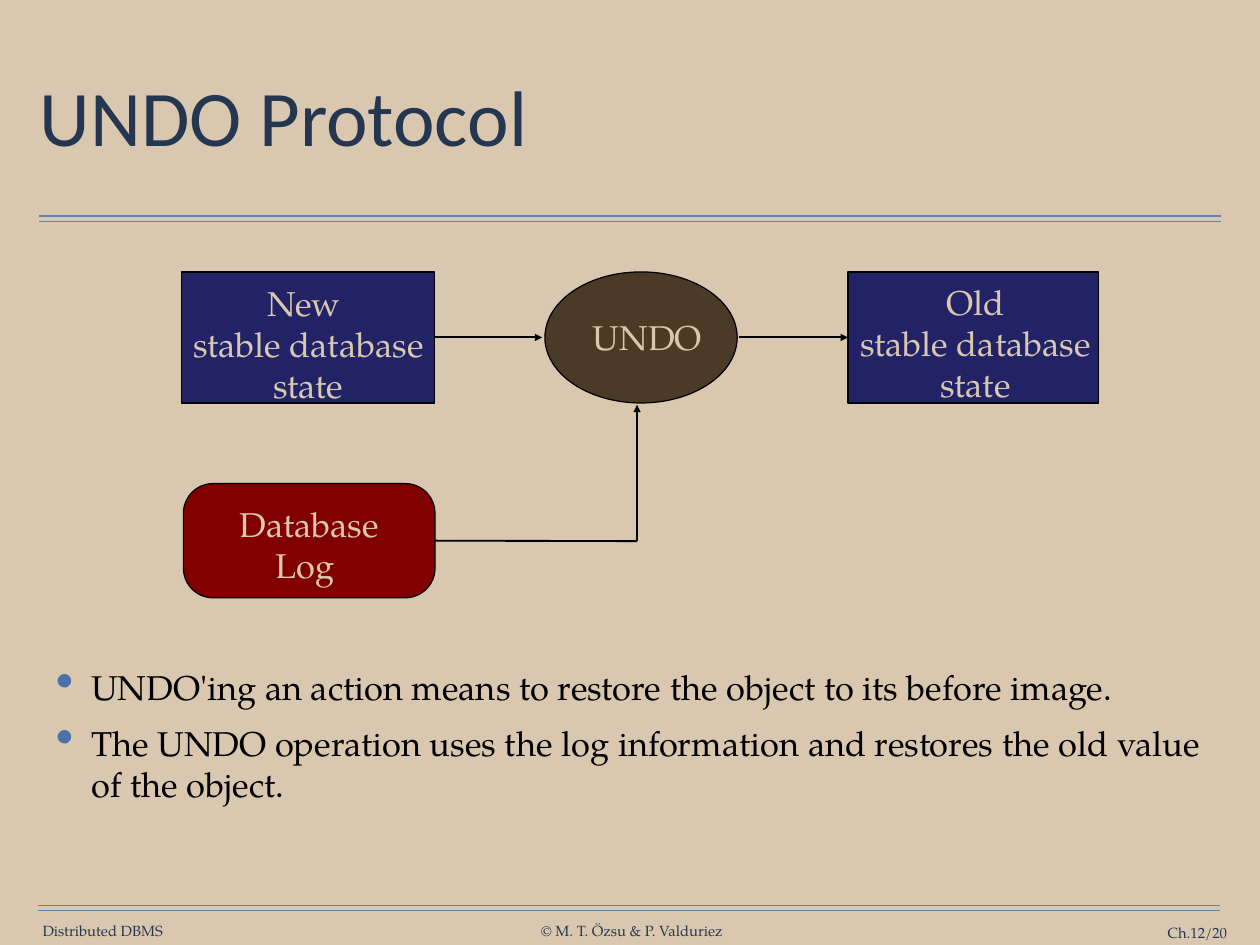
from pptx import Presentation
from pptx.util import Inches, Pt
from pptx.dml.color import RGBColor as Rgb
from pptx.enum.shapes import MSO_SHAPE as Kind, MSO_CONNECTOR as Conn
from pptx.enum.text import PP_ALIGN as Align, MSO_ANCHOR as Anchor, MSO_AUTO_SIZE as Fit
from pptx.oxml.ns import qn
from lxml.etree import SubElement as Sub

HUES = {
    "sand": "D9C8AF", "rule": "6682AA", "slate": "263750", "title": "253750",
    "dot": "4A71A9", "navy": "222267", "red": "800000", "brown": "4A3A26",
    "black": "000000",
}
SERIF = "TeX Gyre Pagella"
SANS = "Calibri"


def hue(name):
    return Rgb.from_string(HUES[name])


class Board:
    def __init__(self, deck):
        self.slide = deck.slides.add_slide(deck.slide_layouts[6])
        self.shapes = self.slide.shapes
        back = self.slide.background.fill
        back.solid()
        back.fore_color.rgb = hue("sand")

    def text(self, rect, lines, size, color, font=SERIF, align=Align.CENTER,
             pad=(0, 0), anchor=Anchor.TOP, wrap=False, space=1.0, gap=0, dots=False):
        frame = self.shapes.add_textbox(*map(Inches, rect)).text_frame
        frame.margin_left = frame.margin_right = Inches(pad[0])
        frame.margin_top = frame.margin_bottom = Inches(pad[1])
        frame.word_wrap = wrap
        frame.auto_size = Fit.NONE if wrap else Fit.SHAPE_TO_FIT_TEXT
        frame.vertical_anchor = anchor
        for num, line in enumerate(lines):
            para = frame.add_paragraph() if num else frame.paragraphs[0]
            para.text = line
            para.alignment = align
            para.line_spacing = space
            if num and gap:
                para.space_before = Pt(gap)
            if dots:
                self.dot(para)
            para.font.size = Pt(size)
            para.font.name = font
            para.font.color.rgb = hue(color)

    def dot(self, para):
        props = para._p.get_or_add_pPr()
        props.set("marL", str(Inches(0.4)))
        props.set("indent", str(-Inches(0.4)))
        Sub(Sub(props, qn("a:buClr")), qn("a:srgbClr"), val=HUES["dot"])
        Sub(props, qn("a:buSzPct"), val="150000")
        Sub(props, qn("a:buChar"), char="•")

    def node(self, kind, rect, color, label, lines):
        shape = self.shapes.add_shape(kind, *map(Inches, rect))
        shape.shadow.inherit = False
        shape.fill.solid()
        shape.fill.fore_color.rgb = hue(color)
        shape.line.color.rgb = hue("black")
        shape.line.width = Pt(1)
        self.text(label, lines, 28, "sand", pad=(0.14, 0.07))
        return shape

    def line(self, start, end, color="black", width=1.5, head=False, source=None, target=None):
        line = self.shapes.add_connector(Conn.STRAIGHT, *map(Inches, start + end))
        line.line.color.rgb = hue(color)
        line.line.width = Pt(width)
        if head:
            Sub(line.line._get_or_add_ln(), qn("a:tailEnd"), type="triangle")
        Sub(line._element.spPr, qn("a:effectLst"))
        if source:
            line.begin_connect(source, 3)
        if target:
            line.end_connect(target, 1)


def main():
    deck = Presentation()
    deck.slide_width = Inches(14.22)
    deck.slide_height = Inches(10.67)
    board = Board(deck)

    for left, top in ((0.44, 2.44), (0.43, 10.22)):
        for y in (top, top + 0.06):
            board.line((left, y), (left + 13.34, y), "rule", 1)

    for rect, words, align, wrap in (
        ((0.47, 10.41, 1.38, 0.2), "Distributed DBMS", Align.CENTER, False),
        ((6.09, 10.41, 2.08, 0.2), "© M. T. Özsu & P. Valduriez", Align.CENTER, False),
        ((12.31, 10.43, 1.54, 0.2), "Ch.12/20", Align.RIGHT, True),
    ):
        board.text(rect, [words], 12, "slate", align=align, anchor=Anchor.MIDDLE, wrap=wrap)

    board.text((0.39, 0.49, 13.44, 1.76), ["UNDO Protocol"], 64, "title", SANS,
               Align.LEFT, (0.06, 0.06), Anchor.MIDDLE, True, 0.9)
    board.text((0.57, 7.46, 13.44, 2.22), [
        "UNDO'ing an action means to restore the object to its before image.",
        "The UNDO operation uses the log information and restores the old value of the object.",
    ], 28, "black", align=Align.LEFT, pad=(0.06, 0.06), wrap=True, gap=12, dots=True)

    state = ["stable database", "state"]
    new = board.node(Kind.RECTANGLE, (2.05, 3.07, 2.85, 1.48), "navy",
                     (2.02, 3.11, 2.92, 1.59), ["New ", *state])
    log = board.node(Kind.ROUNDED_RECTANGLE, (2.07, 5.46, 2.84, 1.29), "red",
                     (2.55, 5.61, 1.88, 1.12), ["Database", "Log "])
    log.adjustments[0] = 0.26
    board.node(Kind.OVAL, (6.15, 3.07, 2.17, 1.48), "brown",
               (6.54, 3.5, 1.53, 0.61), ["UNDO"])
    old = board.node(Kind.RECTANGLE, (9.57, 3.07, 2.83, 1.48), "navy",
                     (9.55, 3.1, 2.92, 1.59), ["Old", *state])

    board.line((4.9, 6.11), (7.19, 6.11), source=log)
    board.line((4.9, 3.81), (6.12, 3.81), head=True, source=new)
    board.line((8.34, 3.81), (9.57, 3.81), head=True, target=old)
    board.line((7.19, 6.11), (7.19, 4.57), head=True)

    deck.save("out.pptx")


if __name__ == "__main__":
    main()
